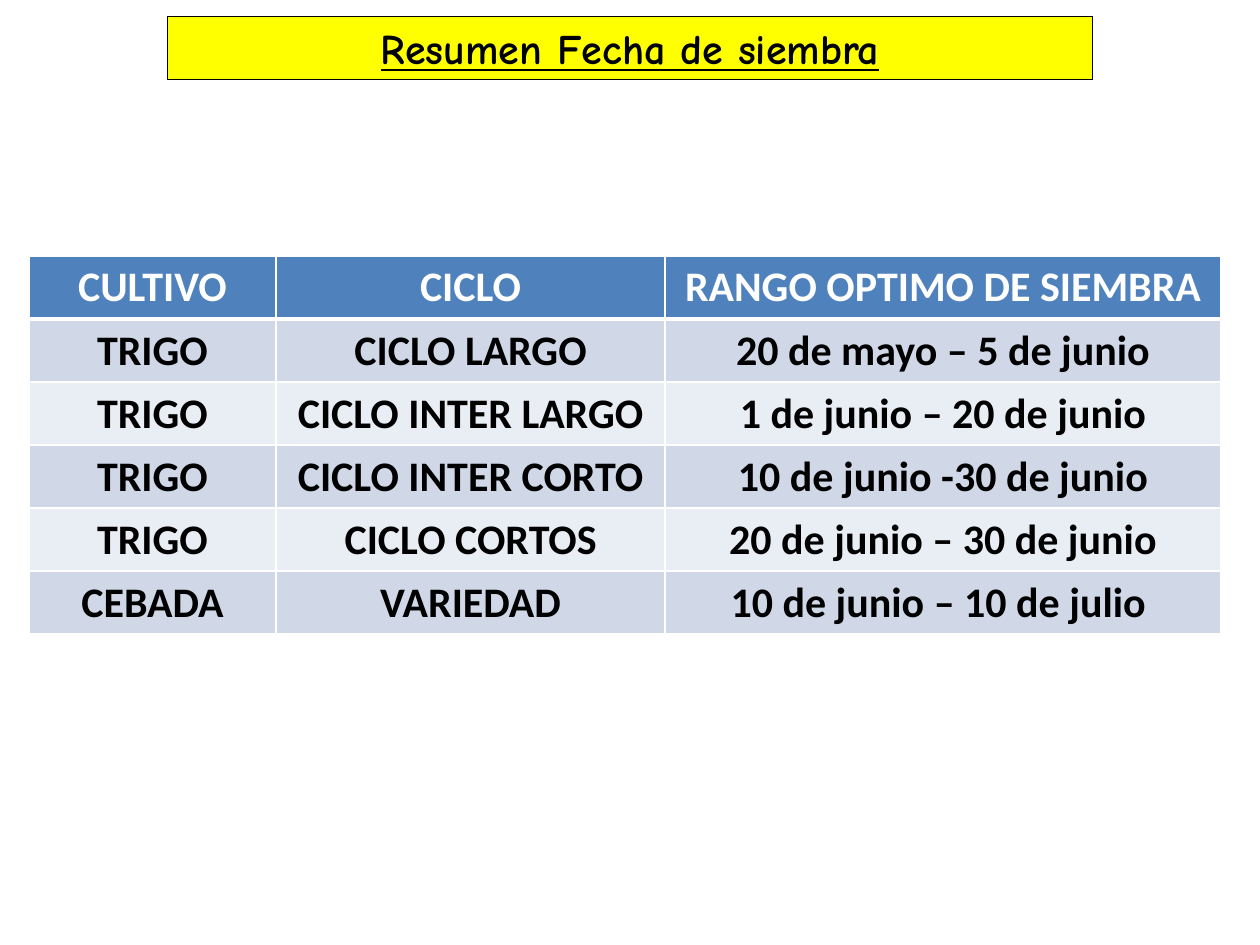
from dataclasses import dataclass

from lxml.etree import SubElement
from pptx import Presentation
from pptx.dml.color import RGBColor
from pptx.enum.shapes import MSO_SHAPE as Shape
from pptx.enum.text import MSO_ANCHOR as Anchor, MSO_AUTO_SIZE as AutoSize, PP_ALIGN as Align
from pptx.oxml.ns import qn
from pptx.util import Inches, Pt

BLACK = RGBColor(0x00, 0x00, 0x00)
WHITE = RGBColor(0xFF, 0xFF, 0xFF)
YELLOW = RGBColor(0xFF, 0xFF, 0x00)
HEADER_BLUE = RGBColor(0x4F, 0x81, 0xBD)
BAND_DARK = RGBColor(0xD0, 0xD8, 0xE8)
BAND_LIGHT = RGBColor(0xE9, 0xED, 0xF4)


@dataclass(frozen=True)
class Sowing:
    crop: str
    cycle: str
    dates: str


HEADINGS = Sowing("CULTIVO", "CICLO", "RANGO OPTIMO DE SIEMBRA")
SOWINGS = [
    Sowing("TRIGO", "CICLO LARGO", "20 de mayo – 5 de junio"),
    Sowing("TRIGO", "CICLO INTER LARGO", "1 de junio – 20 de junio"),
    Sowing("TRIGO", "CICLO INTER CORTO", "10 de junio -30 de junio"),
    Sowing("TRIGO", "CICLO CORTOS", "20 de junio – 30 de junio"),
    Sowing("CEBADA", "VARIEDAD", "10 de junio – 10 de julio "),
]
COLUMN_WIDTHS = (1.96, 3.09, 4.41)
ROW_HEIGHT = 0.5


def write(frame, text: str, font_name: str, color: RGBColor, underline: bool = False) -> None:
    paragraph = frame.paragraphs[0]
    paragraph.alignment = Align.CENTER
    run = paragraph.add_run()
    run.text = text
    font = run.font
    font.name, font.size, font.bold = font_name, Pt(24), True
    font.underline = underline
    font.color.rgb = color


def add_border(cell, side: str, points: float) -> None:
    properties = cell._tc.get_or_add_tcPr()
    line = SubElement(properties, qn(f"a:ln{side}"), w=str(Pt(points)))
    fill = SubElement(line, qn("a:solidFill"))
    SubElement(fill, qn("a:srgbClr"), val=str(WHITE))


def fill_row(table, index: int, sowing: Sowing) -> None:
    is_header = index == 0
    band = HEADER_BLUE if is_header else BAND_DARK if index % 2 else BAND_LIGHT
    # The rule under the header is thicker than the others
    borders = {"L": 1, "R": 1, "T": 3 if index == 1 else 1, "B": 3 if is_header else 1}
    table.rows[index].height = Inches(ROW_HEIGHT)
    for cell, text in zip(table.rows[index].cells, (sowing.crop, sowing.cycle, sowing.dates)):
        for side, points in borders.items():
            add_border(cell, side, points)
        cell.fill.solid()
        cell.fill.fore_color.rgb = band
        cell.vertical_anchor = Anchor.MIDDLE
        write(cell.text_frame, text, "Calibri", WHITE if is_header else BLACK)


def add_title(slide, text: str) -> None:
    title = slide.shapes.add_shape(
        Shape.RECTANGLE, Inches(1.33), Inches(0.13), Inches(7.34), Inches(0.5))
    title.shadow.inherit = False
    title.fill.solid()
    title.fill.fore_color.rgb = YELLOW
    title.line.color.rgb = BLACK
    title.line.width = Pt(0.75)
    title.text_frame.word_wrap = True
    title.text_frame.auto_size = AutoSize.SHAPE_TO_FIT_TEXT
    title.text_frame.vertical_anchor = Anchor.TOP
    write(title.text_frame, text, "Comic Neue", BLACK, underline=True)


def add_sowing_table(slide) -> None:
    rows = [HEADINGS, *SOWINGS]
    table = slide.shapes.add_table(
        len(rows), len(COLUMN_WIDTHS), Inches(0.23), Inches(2.03),
        Inches(sum(COLUMN_WIDTHS)), Inches(ROW_HEIGHT * len(rows))).table
    for column, width in zip(table.columns, COLUMN_WIDTHS):
        column.width = Inches(width)
    for index, sowing in enumerate(rows):
        fill_row(table, index, sowing)


def main() -> None:
    deck = Presentation()
    deck.slide_width, deck.slide_height = Inches(10), Inches(7.5)
    slide = deck.slides.add_slide(deck.slide_layouts[6])
    add_title(slide, "Resumen Fecha de siembra")
    add_sowing_table(slide)
    deck.save("out.pptx")


if __name__ == "__main__":
    main()
